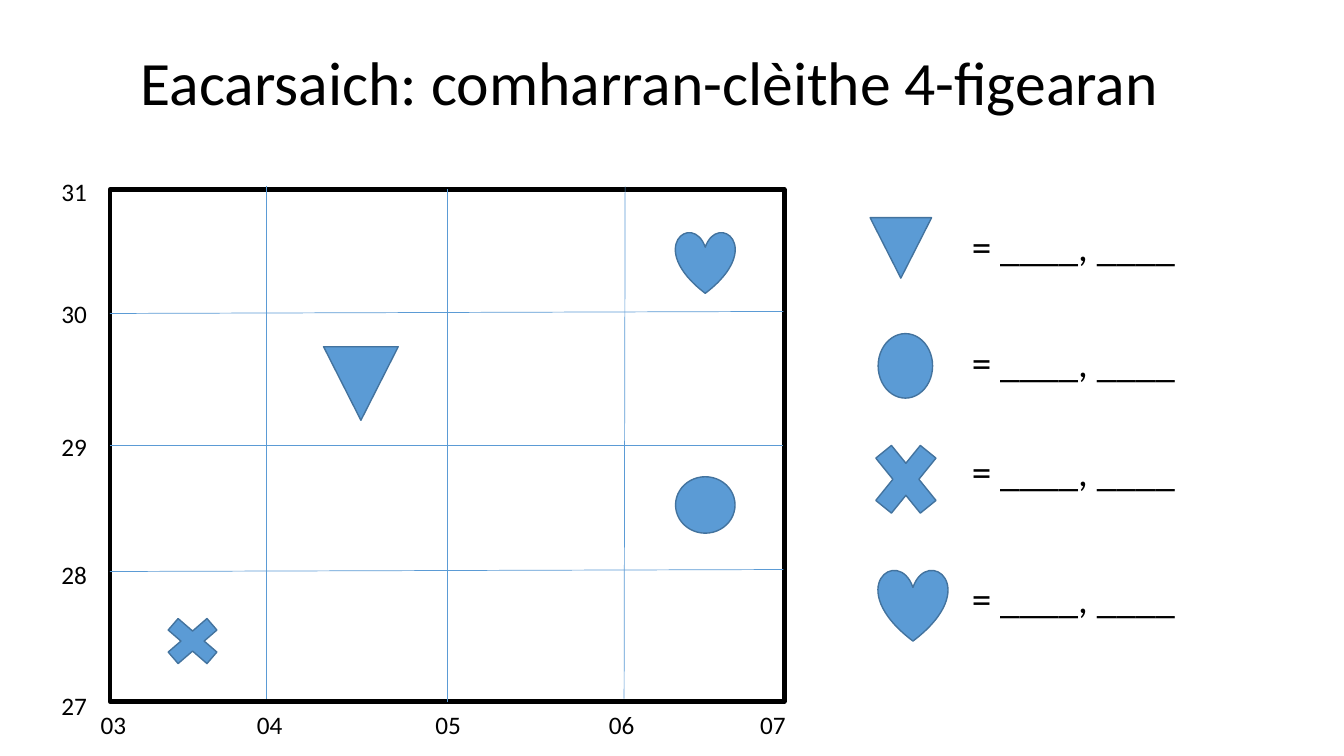
from lxml import etree
from pptx import Presentation
from pptx.dml.color import RGBColor
from pptx.enum.shapes import MSO_CONNECTOR, MSO_SHAPE as SHAPE
from pptx.enum.text import MSO_ANCHOR, PP_ALIGN
from pptx.oxml.ns import qn
from pptx.util import Inches, Pt

# Content
TITLE = "Eacarsaich: comharran-clèithe 4-figearan"
ANSWER = "= ____, ____"
EASTINGS = ["03", "04", "05", "06", "07"]
EASTING_TABS = [1.55, 3.32, 5.04, 6.54]  # from the start of the text
NORTHINGS = [("31", 1.7), ("30", 2.91), ("29", 4.23), ("28", 5.5), ("27", 6.8)]

# Map frame: left, top, width, height
FRAME = (1.09, 1.88, 6.69, 5.08)
GRID_RIGHT = 7.77
ROW_LINES = [(4.42, 4.42), (3.11, 3.09), (5.67, 5.65)]  # y at left, right
COLUMN_LINES = [(4.44, 4.44, 1.88), (2.64, 2.64, 1.85), (6.2, 6.19, 1.85)]  # x, x, top

# Preset, place on the map, place in the key, top of its answer
SYMBOLS = [
    (SHAPE.FLOWCHART_MERGE, (3.21, 3.44, 0.74, 0.73), (8.63, 2.16, 0.61, 0.6), 2.16),
    (SHAPE.FLOWCHART_CONNECTOR, (6.7, 4.73, 0.59, 0.56), (8.71, 3.31, 0.54, 0.64), 3.31),
    (SHAPE.MATH_MULTIPLY, (1.54, 6.04, 0.74, 0.64), (8.56, 4.23, 0.85, 1.05), 4.39),
    (SHAPE.HEART, (6.7, 2.3, 0.59, 0.61), (8.71, 5.65, 0.69, 0.71), 5.65),
]

FONT = "Calibri"
BLACK = RGBColor(0x00, 0x00, 0x00)
BLUE = RGBColor(0x5B, 0x9B, 0xD5)
DARK_BLUE = RGBColor(0x43, 0x73, 0x9E)

deck = Presentation()
deck.slide_width, deck.slide_height = Inches(13.33), Inches(7.5)
page = deck.slides.add_slide(deck.slide_layouts[6])


def add_text(text, place, size):
    box = page.shapes.add_textbox(*map(Inches, place))
    box.text_frame.word_wrap = True
    para = box.text_frame.paragraphs[0]
    para.text = text
    for span in para.runs:
        span.font.name = FONT
        span.font.size = Pt(size)
        span.font.color.rgb = BLACK
    return box, para


def add_outlined(preset, place, fill, line, width):
    shape = page.shapes.add_shape(preset, *map(Inches, place))
    shape.shadow.inherit = False
    if fill is None:
        shape.fill.background()
    else:
        shape.fill.solid()
        shape.fill.fore_color.rgb = fill
    shape.line.color.rgb = line
    shape.line.width = Pt(width)


def add_grid_line(*ends):
    line = page.shapes.add_connector(MSO_CONNECTOR.STRAIGHT, *map(Inches, ends))
    line.line.color.rgb = BLUE
    line.line.width = Pt(0.5)
    etree.SubElement(line._element.spPr, qn("a:effectLst"))


# Title
title_box, title_para = add_text(TITLE, (0.92, 0.4, 11.05, 0.89), 44)
title_box.text_frame.vertical_anchor = MSO_ANCHOR.MIDDLE
title_para.alignment = PP_ALIGN.CENTER
title_para.line_spacing = 0.9

# Map frame and grid
add_outlined(SHAPE.RECTANGLE, FRAME, None, BLACK, 3)
for left_y, right_y in ROW_LINES:
    add_grid_line(FRAME[0], left_y, GRID_RIGHT, right_y)
for top_x, bottom_x, top in COLUMN_LINES:
    add_grid_line(top_x, top, bottom_x, top + FRAME[3])

# Symbols on the map and in the key, with answer blanks
for preset, map_place, key_place, answer_top in SYMBOLS:
    for place in (map_place, key_place):
        add_outlined(preset, place, BLUE, DARK_BLUE, 1)
    add_text(ANSWER, (9.54, answer_top, 2.84, 0.57), 28)

# Axis labels, eastings spaced by tab stops
for northing, top in NORTHINGS:
    add_text(northing, (0.51, top, 0.51, 0.4), 18)
easting_para = add_text("\t".join(EASTINGS), (0.9, 6.99, 7.16, 0.4), 18)[1]
tab_list = etree.SubElement(easting_para._p.get_or_add_pPr(), qn("a:tabLst"))
for stop in EASTING_TABS:
    etree.SubElement(tab_list, qn("a:tab"), pos=str(Inches(stop)), algn="l")

deck.save("out.pptx")
